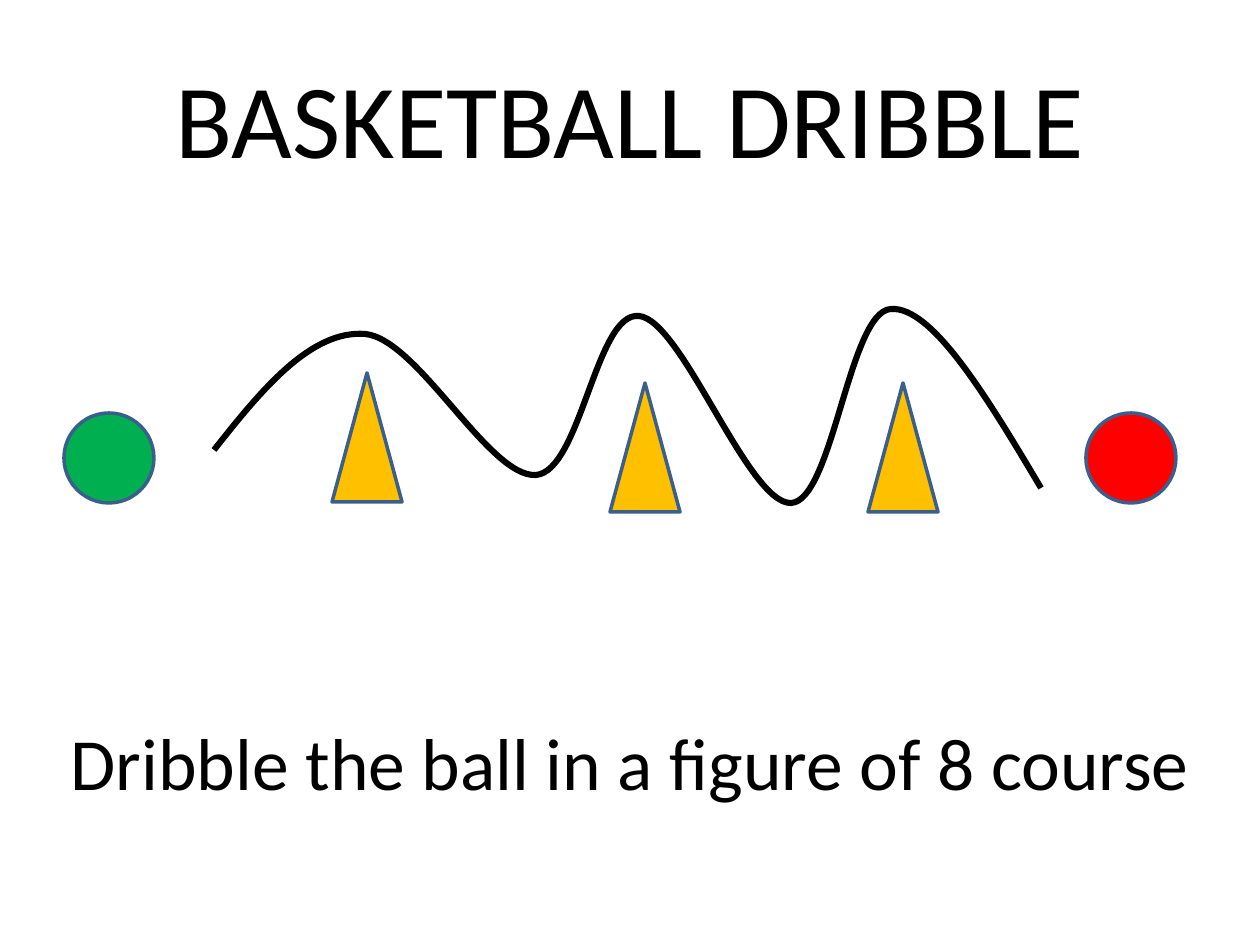
from lxml import etree
from pptx import Presentation
from pptx.dml.color import RGBColor
from pptx.enum.shapes import MSO_SHAPE
from pptx.enum.text import MSO_ANCHOR, MSO_AUTO_SIZE, PP_ALIGN
from pptx.oxml.ns import qn
from pptx.util import Pt

BLACK = RGBColor(0x00, 0x00, 0x00)
GREEN = RGBColor(0x00, 0xB0, 0x50)
RED = RGBColor(0xFF, 0x00, 0x00)
AMBER = RGBColor(0xFF, 0xC0, 0x00)
BLUE = RGBColor(0x3A, 0x5F, 0x8C)

OVAL = MSO_SHAPE.OVAL
CONE = MSO_SHAPE.ISOSCELES_TRIANGLE
CENTER = PP_ALIGN.CENTER
MIDDLE = MSO_ANCHOR.MIDDLE
FIXED = MSO_AUTO_SIZE.NONE

SCALE = 914400 / 126  # EMU per px


def emu(*sizes):
    return [round(size * SCALE) for size in sizes]


def write(frame, text, size, color=BLACK, font="Calibri", space=None):
    frame.auto_size = FIXED
    frame.word_wrap = True
    frame.vertical_anchor = MIDDLE
    line = frame.paragraphs[0]
    line.alignment = CENTER
    line.line_spacing = space
    run = line.add_run()
    run.text = text
    run.font.size = Pt(size)
    run.font.name = font
    run.font.color.rgb = color


class Board:
    edge, width = BLUE, 2

    def __init__(self, slide):
        self.slide = slide
        self.shapes = slide.shapes

    def title(self, text, box, size):
        head = self.shapes.title
        head.left, head.top, head.width, head.height = emu(*box)
        write(head.text_frame, text, size)

    def text(self, text, box, size, **style):
        write(self.shapes.add_textbox(*emu(*box)).text_frame, text, size, **style)

    def shape(self, kind, box, fill):
        item = self.shapes.add_shape(kind, *emu(*box))
        item.shadow.inherit = False
        item.fill.solid()
        item.fill.fore_color.rgb = fill
        item.line.color.rgb = self.edge
        item.line.width = Pt(self.width)

    def curve(self, start, bends, color, width):
        """Draw a smooth line; each bend is two control points and an end."""
        knots = [start] + [bend[-1] for bend in bends]
        form = self.shapes.build_freeform(*start, scale=SCALE)
        form.add_line_segments(knots[1:], close=False)
        item = form.convert_to_shape()
        item.shadow.inherit = False
        item.fill.background()
        item.line.color.rgb = color
        item.line.width = Pt(width)
        # Turn the straight segments into Bezier curves
        left = min(x for x, y in knots)
        top = min(y for x, y in knots)
        for seg, bend in zip(list(item.element.iter(qn("a:lnTo"))), bends):
            cubic = etree.Element(qn("a:cubicBezTo"))
            for x, y in bend:
                etree.SubElement(cubic, qn("a:pt"), x=str(x - left), y=str(y - top))
            seg.getparent().replace(seg, cubic)


def main():
    deck = Presentation()
    deck.slide_width, deck.slide_height = emu(1260, 945)
    board = Board(deck.slides.add_slide(deck.slide_layouts[5]))

    # Heading
    board.title("BASKETBALL DRIBBLE", (63, 38, 1134, 157), 60)

    # Start and finish
    for left, fill in ((64, GREEN), (1086, RED)):
        board.shape(OVAL, (left, 413, 90, 90), fill)

    # Instruction
    board.text("Dribble the ball in a figure of 8 course",
               (0, 690, 1260, 158), 42, space=0.8)

    # Cones
    for left, top in ((332, 373), (610, 383), (868, 383)):
        board.shape(CONE, (left, top, 70, 129), AMBER)

    # Route around the cones
    board.curve((214, 450), [
        ((262, 389), (311, 330), (365, 334)),
        ((418, 339), (489, 478), (536, 475)),
        ((581, 471), (596, 311), (639, 316)),
        ((682, 320), (748, 504), (791, 503)),
        ((833, 501), (849, 311), (891, 309)),
        ((932, 306), (987, 397), (1041, 488)),
    ], BLACK, 3.5)

    deck.save("out.pptx")


if __name__ == "__main__":
    main()
